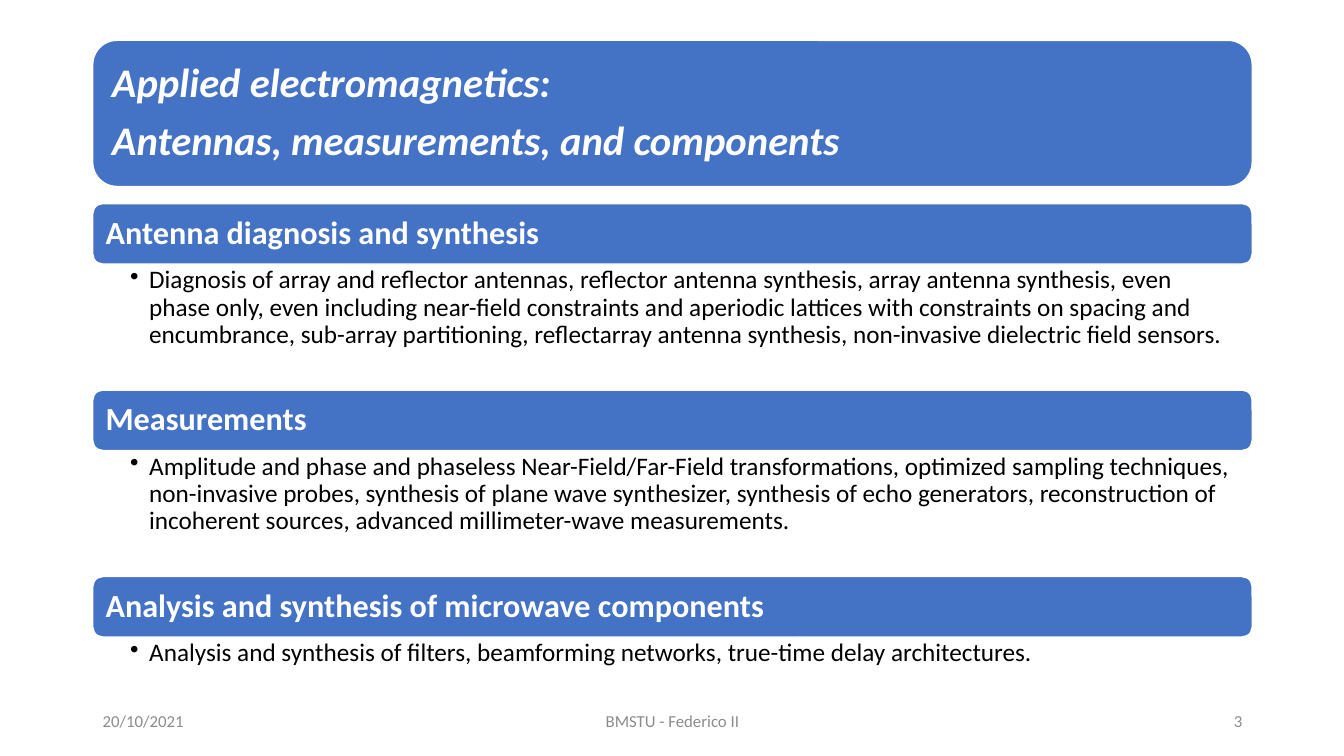
from dataclasses import dataclass

from lxml.etree import SubElement
from pptx import Presentation
from pptx.dml.color import RGBColor
from pptx.enum.shapes import MSO_SHAPE
from pptx.enum.text import MSO_ANCHOR, MSO_AUTO_SIZE, PP_ALIGN
from pptx.oxml.ns import qn
from pptx.util import Inches, Pt


@dataclass(frozen=True)
class Theme:
    font: str = "Calibri"
    accent: str = "4472C4"
    light: str = "FFFFFF"
    dark: str = "000000"
    muted: str = "8C8C8C"
    title_size: int = 29
    heading_size: int = 23
    body_size: int = 18
    footer_size: int = 12


LEFT, WIDTH = 0.92, 11.5
SECTION_TOP, SECTION_STEP, HEADING_HEIGHT = 2.02, 1.85, 0.6
BULLET_INDENT = 0.19

TITLE = ["Applied electromagnetics:", "Antennas, measurements, and components"]
SECTIONS = [
    ("Antenna diagnosis and synthesis", 1.25,
     "Diagnosis of array and reflector antennas, reflector antenna synthesis, "
     "array antenna synthesis, even phase only, even including near-field "
     "constraints and aperiodic lattices with constraints on spacing and "
     "encumbrance, sub-array partitioning, reflectarray antenna synthesis, "
     "non-invasive dielectric field sensors."),
    ("Measurements", 1.25,
     "Amplitude and phase and phaseless Near-Field/Far-Field transformations, "
     "optimized sampling techniques, non-invasive probes, synthesis of plane "
     "wave synthesizer, synthesis of echo generators, reconstruction of "
     "incoherent sources, advanced millimeter-wave measurements."),
    ("Analysis and synthesis of microwave components", 0.42,
     "Analysis and synthesis of filters, beamforming networks, "
     "true-time delay architectures."),
]
FOOTER = [
    ("20/10/2021", 0.92, 3, PP_ALIGN.LEFT),
    ("BMSTU - Federico II", 4.42, 4.5, PP_ALIGN.CENTER),
    ("3", 9.42, 3, PP_ALIGN.RIGHT),
]


def write_text(frame, lines, *, theme, size, color, bold=False, italic=False,
               align=PP_ALIGN.LEFT, anchor=MSO_ANCHOR.MIDDLE,
               insets=(0.1, 0.05, 0.1, 0.05), line_spacing=0.9,
               space_after=0, bullet=False):
    """Fill a text frame, one paragraph per line; insets run left, top, right, bottom."""
    frame.word_wrap = True
    frame.auto_size = MSO_AUTO_SIZE.NONE
    frame.vertical_anchor = anchor
    (frame.margin_left, frame.margin_top,
     frame.margin_right, frame.margin_bottom) = map(Inches, insets)
    frame.text = "\n".join(lines)
    for paragraph in frame.paragraphs:
        paragraph.alignment = align
        paragraph.line_spacing = line_spacing
        paragraph.space_before = Pt(0)
        paragraph.space_after = Pt(space_after)
        if bullet:
            paragraph.level = 1
            properties = paragraph._p.get_or_add_pPr()
            properties.set("marL", str(Inches(BULLET_INDENT)))
            properties.set("indent", str(-Inches(BULLET_INDENT)))
            SubElement(properties, qn("a:buChar")).set("char", "•")
        font = paragraph.font
        font.name, font.size = theme.font, Pt(size)
        font.bold, font.italic = bold, italic
        font.color.rgb = RGBColor.from_string(color)


class SlideBuilder:
    def __init__(self, slide, theme):
        self.slide, self.theme = slide, theme

    def bar(self, top, height):
        bar = self.slide.shapes.add_shape(
            MSO_SHAPE.ROUNDED_RECTANGLE, Inches(LEFT), Inches(top),
            Inches(WIDTH), Inches(height))
        bar.shadow.inherit = False
        bar.fill.solid()
        bar.fill.fore_color.rgb = RGBColor.from_string(self.theme.accent)
        bar.line.color.rgb = RGBColor.from_string(self.theme.light)
        bar.line.width = Pt(1)
        return bar

    def title(self, lines):
        self.bar(0.4, 1.45)
        title = self.slide.shapes.title
        title.left, title.top = Inches(0.99), Inches(0.47)
        title.width, title.height = Inches(11.36), Inches(1.31)
        # Bring the title in front of its bar
        self.slide.shapes._spTree.append(title._element)
        write_text(title.text_frame, lines, theme=self.theme,
                   size=self.theme.title_size, color=self.theme.light,
                   bold=True, italic=True, insets=(0.12,) * 4, space_after=10)

    def heading(self, text, top):
        heading = self.bar(top, HEADING_HEIGHT)
        write_text(heading.text_frame, [text], theme=self.theme,
                   size=self.theme.heading_size, color=self.theme.light,
                   bold=True, insets=(0.1,) * 4)

    def text_box(self, text, left, top, width, height, **style):
        box = self.slide.shapes.add_textbox(
            Inches(left), Inches(top), Inches(width), Inches(height))
        write_text(box.text_frame, [text], theme=self.theme, **style)

    def body(self, text, top, height):
        self.text_box(text, LEFT, top, WIDTH, height,
                      size=self.theme.body_size, color=self.theme.dark,
                      anchor=MSO_ANCHOR.TOP, insets=(0.37, 0.03, 0.18, 0.03),
                      bullet=True)

    def footer(self, text, left, width, align):
        self.text_box(text, left, 6.95, width, 0.4, align=align,
                      size=self.theme.footer_size, color=self.theme.muted,
                      line_spacing=1.0)


def main():
    deck = Presentation()
    deck.slide_width, deck.slide_height = Inches(13.33), Inches(7.5)
    builder = SlideBuilder(deck.slides.add_slide(deck.slide_layouts[5]), Theme())

    # Title banner
    builder.title(TITLE)

    # Research topics
    for index, (heading, body_height, body) in enumerate(SECTIONS):
        top = SECTION_TOP + index * SECTION_STEP
        builder.heading(heading, top)
        builder.body(body, top + HEADING_HEIGHT, body_height)

    # Footer
    for text, left, width, align in FOOTER:
        builder.footer(text, left, width, align)

    deck.save("out.pptx")


if __name__ == "__main__":
    main()
